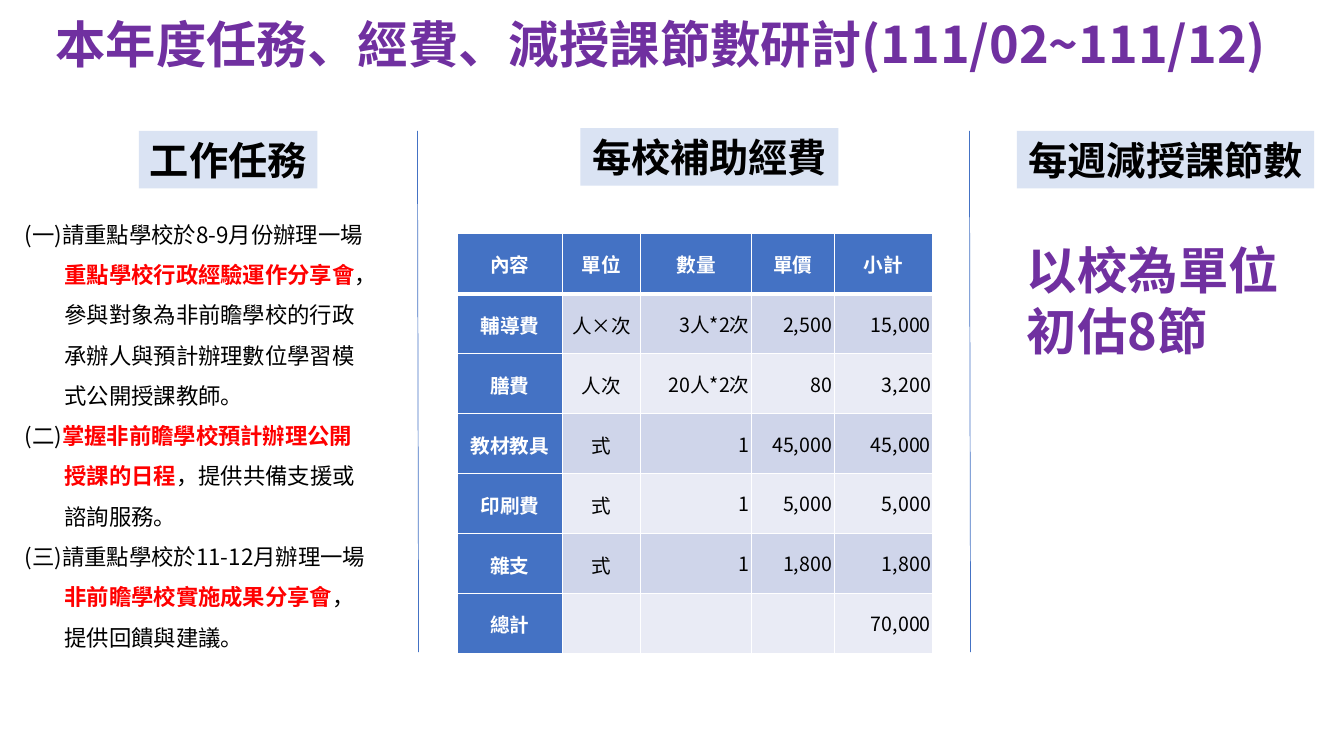
from lxml import etree
from pptx import Presentation
from pptx.dml.color import RGBColor
from pptx.enum.shapes import MSO_CONNECTOR, MSO_SHAPE
from pptx.enum.text import MSO_ANCHOR, MSO_AUTO_SIZE, PP_ALIGN
from pptx.oxml.ns import qn
from pptx.util import Cm, Pt

LEFT, CENTER, RIGHT = PP_ALIGN.LEFT, PP_ALIGN.CENTER, PP_ALIGN.RIGHT
MIDDLE, TOP = MSO_ANCHOR.MIDDLE, MSO_ANCHOR.TOP
FIXED_SIZE = MSO_AUTO_SIZE.NONE
RECTANGLE, STRAIGHT = MSO_SHAPE.RECTANGLE, MSO_CONNECTOR.STRAIGHT

FONT = "Noto Sans CJK SC"
BLACK = RGBColor(0x00, 0x00, 0x00)
WHITE = RGBColor(0xFF, 0xFF, 0xFF)
RED = RGBColor(0xFF, 0x00, 0x00)
PURPLE = RGBColor(0x70, 0x30, 0xA0)
BLUE = RGBColor(0x44, 0x72, 0xC4)
HEADING_FILL = RGBColor(0xDA, 0xE3, 0xF3)
BAND_FILLS = (RGBColor(0xE9, 0xEB, 0xF5), RGBColor(0xCF, 0xD5, 0xEA))

# Each task is a list of (text, emphasised) pieces.
TASKS = [
    [("(一)請重點學校於8-9月份辦理一場", False),
     ("重點學校行政經驗運作分享會", True),
     ("，參與對象為非前瞻學校的行政承辦人與預計辦理數位學習模式公開授課教師。", False)],
    [("(二)", False),
     ("掌握非前瞻學校預計辦理公開授課的日程", True),
     ("，提供共備支援或諮詢服務。", False)],
    [("(三)請重點學校於11-12月辦理一場", False),
     ("非前瞻學校實施成果分享會", True),
     ("，提供回饋與建議。", False)],
]
BUDGET = [
    ("內容", "單位", "數量", "單價", "小計"),
    ("輔導費", "人×次", "3人*2次", "2,500", "15,000"),
    ("膳費", "人次", "20人*2次", "80", "3,200"),
    ("教材教具", "式", "1", "45,000", "45,000"),
    ("印刷費", "式", "1", "5,000", "5,000"),
    ("雜支", "式", "1", "1,800", "1,800"),
    ("總計", "", "", "", "70,000"),
]
COLUMN_WIDTHS = (2.64, 1.98, 2.79, 2.08, 2.49)
ROW_HEIGHT = 1.51


def style_paragraph(paragraph, size, color, bold=False, align=LEFT):
    """Set the font for Latin and East Asian text alike."""
    paragraph.alignment = align
    font = paragraph.font
    font.name, font.size, font.bold = FONT, Pt(size), bold
    font.color.rgb = color
    defaults = paragraph._p.pPr.find(qn("a:defRPr"))
    etree.SubElement(defaults, qn("a:ea"), typeface=FONT)


def prepare_frame(shape, wrap=False, anchor=MIDDLE):
    frame = shape.text_frame
    frame.word_wrap = wrap
    frame.auto_size = FIXED_SIZE
    frame.vertical_anchor = anchor
    return frame


def place(shape, left, top, width, height):
    shape.left, shape.top = Cm(left), Cm(top)
    shape.width, shape.height = Cm(width), Cm(height)


def fill_title(title, left, top, width, height):
    place(title, left, top, width, height)
    frame = prepare_frame(title)
    frame.text = "本年度任務、經費、減授課節數研討(111/02~111/12)"
    style_paragraph(frame.paragraphs[0], 36, PURPLE, bold=True)


def fill_tasks(body, left, top, width, height):
    place(body, left, top, width, height)
    frame = prepare_frame(body, wrap=True, anchor=TOP)
    for index, pieces in enumerate(TASKS):
        paragraph = frame.add_paragraph() if index else frame.paragraphs[0]
        properties = paragraph._p.get_or_add_pPr()
        properties.set("marL", str(Cm(1.37)))
        properties.set("indent", str(Cm(-1)))
        etree.SubElement(properties, qn("a:buNone"))
        paragraph.line_spacing = 1.5
        paragraph.space_before = Pt(0)
        style_paragraph(paragraph, 16, BLACK)
        for text, emphasised in pieces:
            run = paragraph.add_run()
            run.text = text
            if emphasised:
                run.font.bold = True
                run.font.color.rgb = RED


def add_heading(slide, text, left, top, width, height=1.45):
    heading = slide.shapes.add_shape(RECTANGLE, Cm(left), Cm(top), Cm(width), Cm(height))
    heading.shadow.inherit = False
    heading.fill.solid()
    heading.fill.fore_color.rgb = HEADING_FILL
    heading.line.fill.background()
    frame = prepare_frame(heading)
    frame.text = text
    style_paragraph(frame.paragraphs[0], 28, BLACK, bold=True, align=CENTER)


def add_borders(cell, top_width, bottom_width):
    properties = cell._tc.get_or_add_tcPr()
    for side, width in (("L", 1), ("R", 1), ("T", top_width), ("B", bottom_width)):
        line = etree.SubElement(properties, qn(f"a:ln{side}"), w=str(Pt(width)))
        fill = etree.SubElement(line, qn("a:solidFill"))
        etree.SubElement(fill, qn("a:srgbClr"), val=str(WHITE))


def fill_cell(cell, text, row, column):
    is_header = row == 0 or column == 0
    add_borders(cell, 3 if row == 1 else 1, 3 if row == 0 else 1)
    cell.fill.solid()
    cell.fill.fore_color.rgb = BLUE if is_header else BAND_FILLS[row % 2]
    cell.vertical_anchor = MIDDLE
    cell.margin_left = cell.margin_right = Cm(0.05)
    cell.margin_top = cell.margin_bottom = 0
    cell.text = text
    paragraph = cell.text_frame.paragraphs[0]
    if row and column < 2:
        paragraph.line_spacing = Pt(22)
    style_paragraph(paragraph, 14, WHITE if is_header else BLACK, bold=is_header,
                    align=CENTER if row == 0 or column < 2 else RIGHT)


def add_budget_table(slide, left, top):
    table = slide.shapes.add_table(
        len(BUDGET), len(COLUMN_WIDTHS), Cm(left), Cm(top),
        Cm(sum(COLUMN_WIDTHS)), Cm(ROW_HEIGHT * len(BUDGET))).table
    for column, width in zip(table.columns, COLUMN_WIDTHS):
        column.width = Cm(width)
    for row, texts in enumerate(BUDGET):
        table.rows[row].height = Cm(ROW_HEIGHT)
        for column, text in enumerate(texts):
            fill_cell(table.cell(row, column), text, row, column)


def add_reduction_note(slide, left, top, width, height):
    box = slide.shapes.add_textbox(Cm(left), Cm(top), Cm(width), Cm(height))
    frame = prepare_frame(box)
    frame.text = "以校為單位\n初估8節"
    for paragraph in frame.paragraphs:
        style_paragraph(paragraph, 36, PURPLE, bold=True)


def add_divider(slide, left, top, height):
    divider = slide.shapes.add_connector(
        STRAIGHT, Cm(left), Cm(top), Cm(left + 0.03), Cm(top + height))
    divider.line.color.rgb = BLUE
    divider.line.width = Pt(0.5)
    etree.SubElement(divider._element.spPr, qn("a:effectLst"))


def main():
    presentation = Presentation()
    presentation.slide_width, presentation.slide_height = Cm(33.87), Cm(19.05)
    slide = presentation.slides.add_slide(presentation.slide_layouts[1])
    fill_title(slide.shapes.title, 1.14, 0.2, 31.67, 1.8)
    fill_tasks(slide.placeholders[1], 0, 5.1, 9.68, 11.53)
    add_budget_table(slide, 11.53, 5.89)
    add_reduction_note(slide, 25.63, 5.89, 6.93, 3.33)
    for left in (10.52, 24.43):
        add_divider(slide, left, 3.3, 13.13)
    add_heading(slide, "工作任務", 3.5, 3.3, 4.5)
    add_heading(slide, "每校補助經費", 14.63, 3.23, 6.5)
    add_heading(slide, "每週減授課節數", 25.63, 3.3, 7.49)
    presentation.save("out.pptx")


if __name__ == "__main__":
    main()
